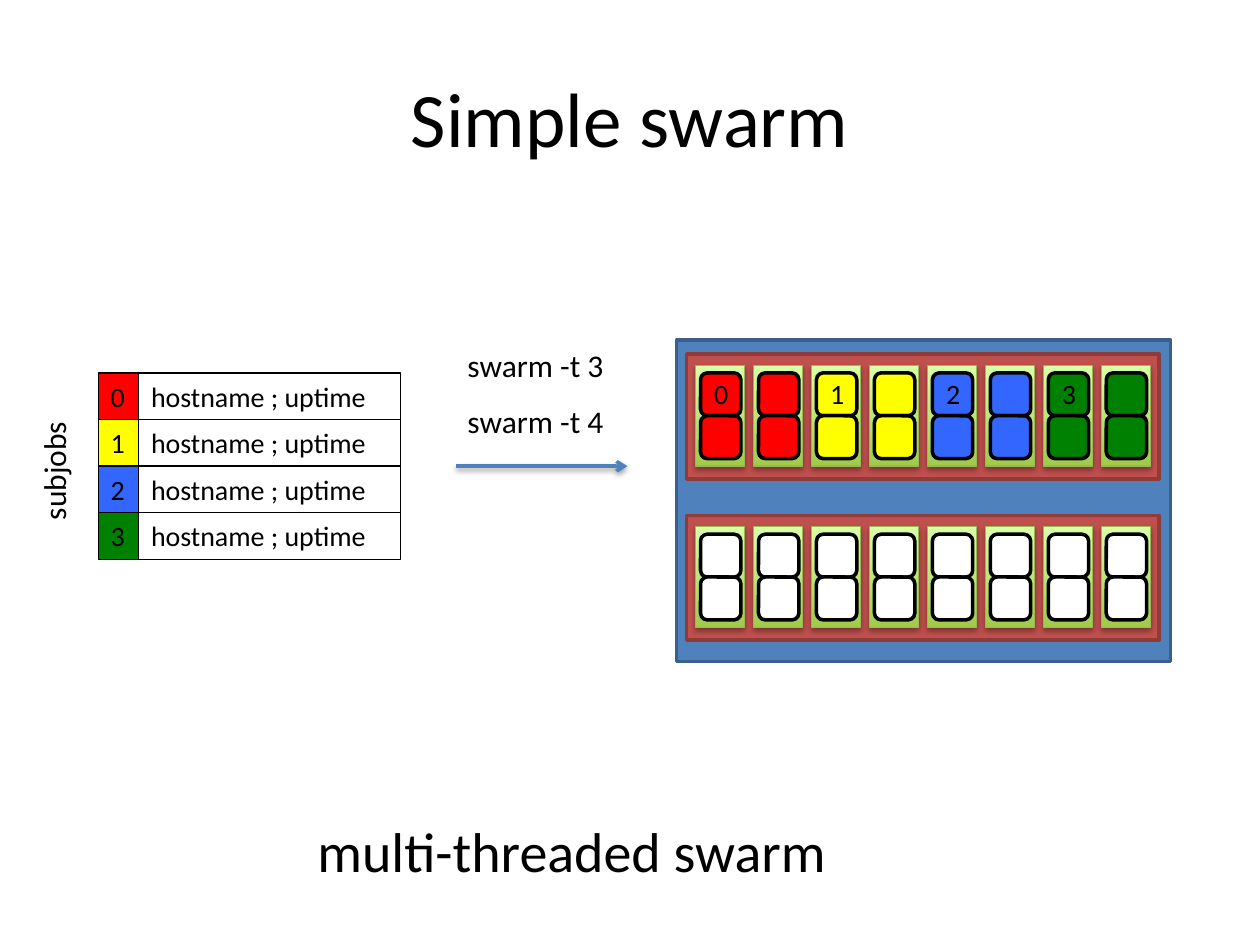
from lxml.etree import SubElement
from pptx import Presentation
from pptx.dml.color import RGBColor
from pptx.enum.shapes import MSO_CONNECTOR, MSO_SHAPE
from pptx.enum.text import MSO_ANCHOR, MSO_AUTO_SIZE, PP_ALIGN
from pptx.oxml.ns import qn
from pptx.util import Inches, Pt

COLORS = {
    "black": "000000", "white": "FFFFFF", "red": "FF0000", "yellow": "FFFF00",
    "blue": "3366FF", "green": "008000", "node": "4F81BD", "node_edge": "3A5F8C",
    "socket": "C0504D", "socket_edge": "8E3B39", "core_dark": "A0CA4A",
    "core_light": "DAFFA5", "core_edge": "98B955",
}
SUBJOBS = ["red", "yellow", "blue", "green"]
CORES = 8
CORE_PITCH = 0.46
THREAD_HEIGHT = 0.34


def rgb(name):
    return RGBColor.from_string(COLORS[name])


def write(shape, text, size=16, font="Calibri", align=PP_ALIGN.LEFT,
          anchor=MSO_ANCHOR.TOP, wrap=False, grow=True):
    frame = shape.text_frame
    frame.word_wrap = wrap
    frame.auto_size = MSO_AUTO_SIZE.SHAPE_TO_FIT_TEXT if grow else MSO_AUTO_SIZE.NONE
    frame.vertical_anchor = anchor
    paragraph = frame.paragraphs[0]
    paragraph.alignment = align
    run = paragraph.add_run()
    run.text = text
    run.font.size = Pt(size)
    run.font.name = font
    run.font.color.rgb = rgb("black")


def add_shadow(effects, distance, opacity):
    shadow = SubElement(effects, qn("a:outerShdw"), blurRad="40000",
                        dist=str(distance), dir="5400000", rotWithShape="0")
    color = SubElement(shadow, qn("a:srgbClr"), val=COLORS["black"])
    SubElement(color, qn("a:alpha"), val=str(opacity * 1000))


class Diagram:
    def __init__(self, slide):
        self.slide = slide

    def label(self, text, left, top, width, height, rotation=0, **text_format):
        box = self.slide.shapes.add_textbox(
            Inches(left), Inches(top), Inches(width), Inches(height))
        box.rotation = rotation
        write(box, text, **text_format)

    def box(self, left, top, width, height, fill=None, edge="black", weight=0.75,
            kind=MSO_SHAPE.RECTANGLE):
        shape = self.slide.shapes.add_shape(
            kind, Inches(left), Inches(top), Inches(width), Inches(height))
        shape.shadow.inherit = False
        if fill:
            shape.fill.solid()
            shape.fill.fore_color.rgb = rgb(fill)
        else:
            shape.fill.background()
        shape.line.color.rgb = rgb(edge)
        shape.line.width = Pt(weight)
        return shape

    def core(self, left, top, thread_color):
        core = self.box(left, top, 0.39, 0.8, edge="core_edge")
        core.fill.gradient()
        core.fill.gradient_angle = 90
        for stop, color in zip(core.fill.gradient_stops, ["core_dark", "core_light"]):
            stop.color.rgb = rgb(color)
        add_shadow(core.element.spPr.find(qn("a:effectLst")), 23000, 35)
        for thread in range(2):
            self.box(left + 0.04, top + 0.06 + thread * THREAD_HEIGHT, 0.32,
                     THREAD_HEIGHT, thread_color, weight=2,
                     kind=MSO_SHAPE.ROUNDED_RECTANGLE)

    def socket(self, top, thread_colors):
        self.box(5.45, top, 3.75, 0.99, "socket", "socket_edge", 2)
        for index, color in enumerate(thread_colors):
            self.core(5.52 + index * CORE_PITCH, top + 0.09, color)

    def arrow(self, left, right, y):
        arrow = self.slide.shapes.add_connector(
            MSO_CONNECTOR.STRAIGHT, Inches(left), Inches(y), Inches(right), Inches(y))
        arrow.line.color.rgb = rgb("node")
        arrow.line.width = Pt(2)
        properties = arrow.element.spPr
        SubElement(properties.find(qn("a:ln")), qn("a:tailEnd"), type="arrow")
        add_shadow(SubElement(properties, qn("a:effectLst")), 20000, 38)


def main():
    presentation = Presentation()
    presentation.slide_width = Inches(10)
    presentation.slide_height = Inches(7.5)
    diagram = Diagram(presentation.slides.add_slide(presentation.slide_layouts[6]))

    diagram.label("Simple swarm", 0.5, 0.3, 9, 1.25, size=44, align=PP_ALIGN.CENTER,
                  anchor=MSO_ANCHOR.MIDDLE, wrap=True, grow=False)
    diagram.label("subjobs", -0.07, 3.53, 0.99, 0.4, rotation=270, size=18)
    for index, color in enumerate(SUBJOBS):
        top = 2.96 + index * 0.37
        write(diagram.box(0.78, top, 0.32, 0.37, color), str(index))
        write(diagram.box(1.1, top, 2.08, 0.37), "hostname ; uptime", wrap=True)

    for command, top in [("swarm -t 3", 2.7), ("swarm -t 4", 3.14)]:
        diagram.label(command, 3.6, top, 1.3, 0.4, size=18, align=PP_ALIGN.CENTER)
    diagram.arrow(3.62, 4.98, 3.7)

    diagram.box(5.37, 2.7, 3.92, 2.55, "node", "node_edge", 2)
    diagram.socket(2.81, [color for color in SUBJOBS for _ in range(2)])
    diagram.socket(4.09, ["white"] * CORES)
    for index in range(len(SUBJOBS)):
        diagram.label(str(index), 5.57 + index * 2 * CORE_PITCH, 2.94, 0.32, 0.37)

    diagram.label("multi-threaded swarm", 2.42, 6.43, 4.29, 0.64, size=32)
    presentation.save("out.pptx")


if __name__ == "__main__":
    main()
